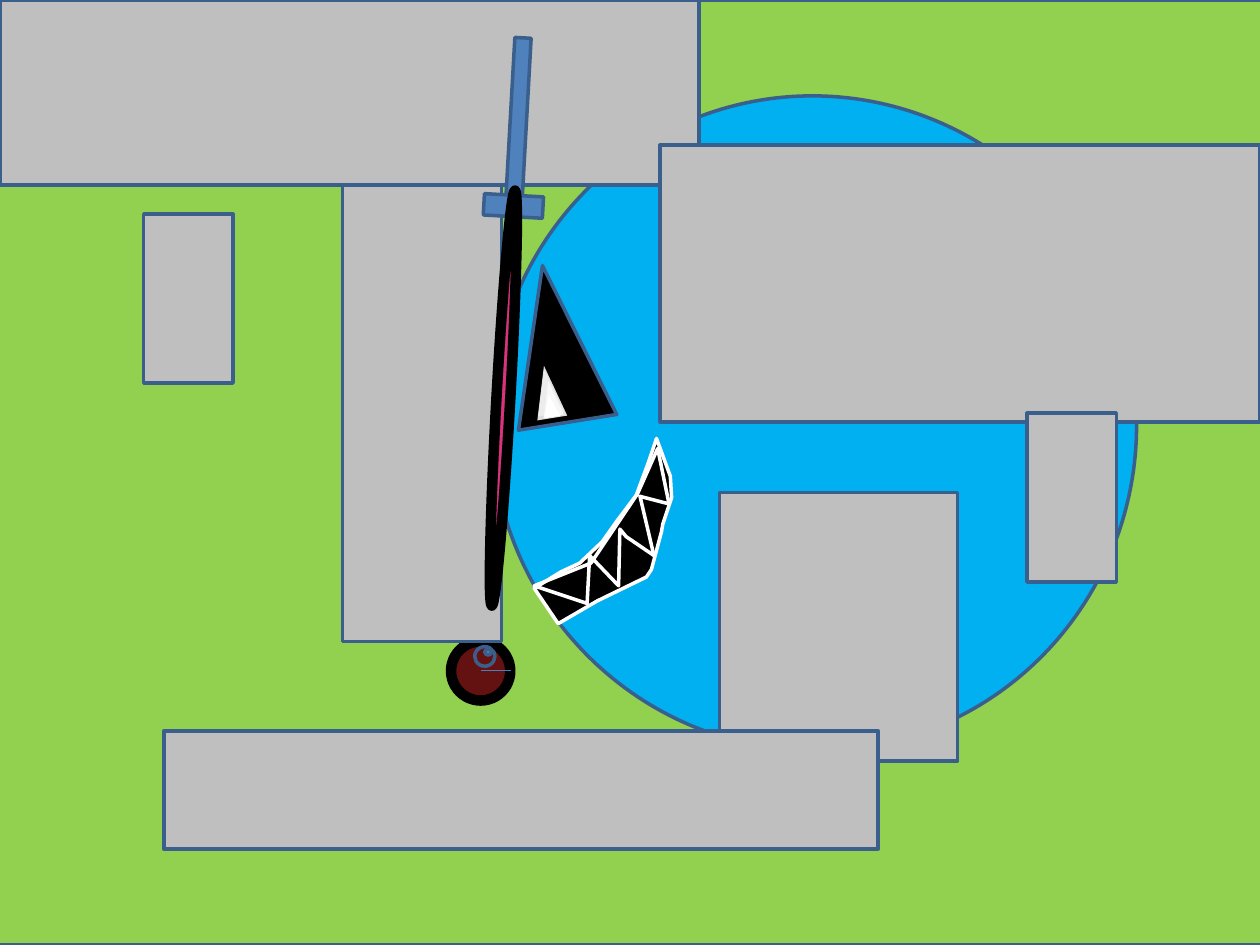
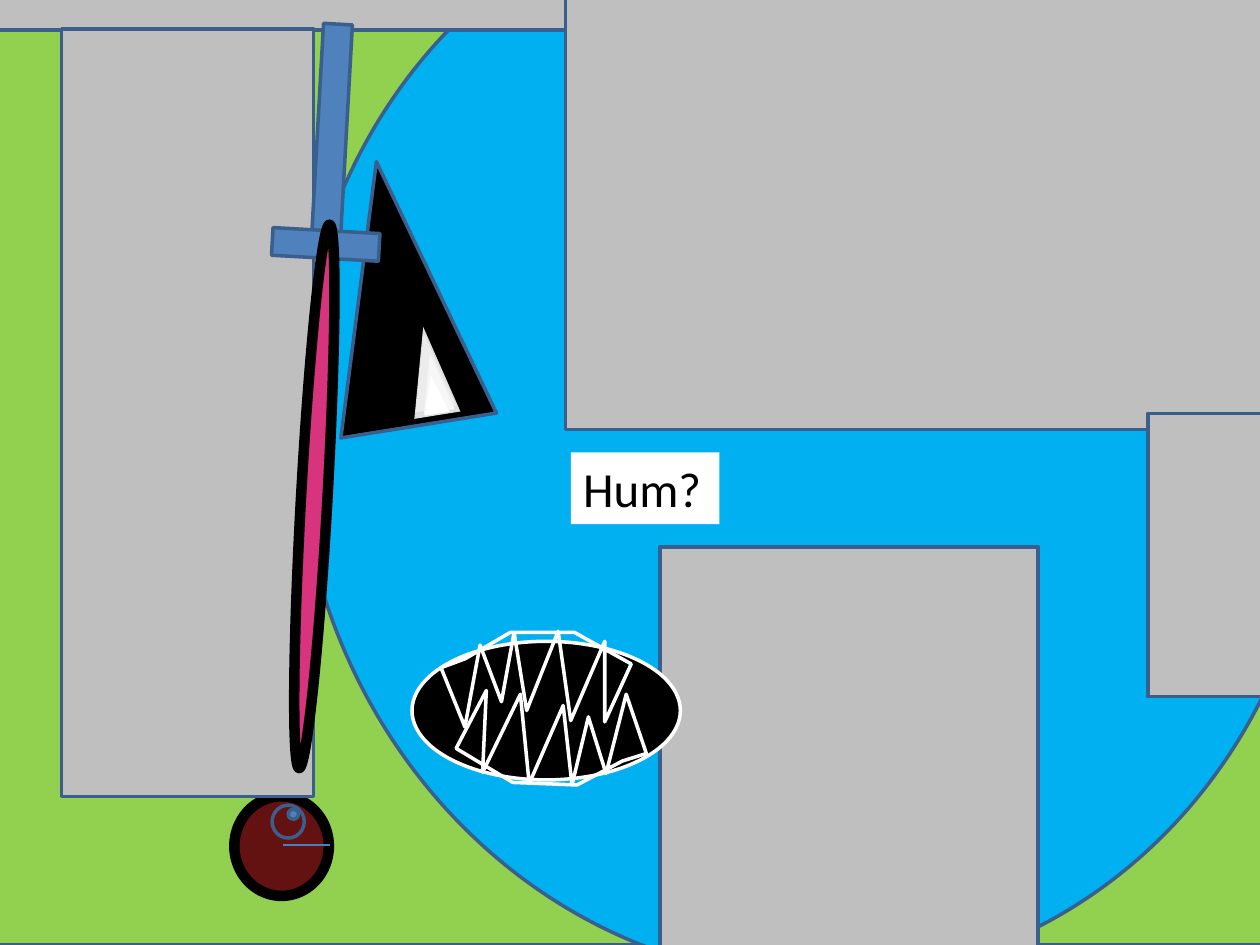
from dataclasses import dataclass

from lxml.etree import SubElement
from pptx import Presentation
from pptx.dml.color import RGBColor
from pptx.enum.shapes import MSO_CONNECTOR, MSO_SHAPE as Preset
from pptx.oxml.ns import qn
from pptx.util import Inches, Pt


@dataclass(frozen=True)
class Theme:
    grass: str = "92D050"
    body: str = "00B0F0"
    stone: str = "BFBFBF"
    edge: str = "3A5F8C"
    steel: str = "4F81BD"
    blade: str = "D8347E"
    thread: str = "4B7EBC"
    ball: str = "641111"
    black: str = "000000"
    white: str = "FFFFFF"
    font: str = "Calibri"
    speech: int = 28
    thin: float = 0.75
    medium: float = 2
    thick: float = 6


THEME = Theme()
COLS, ROWS = 10, 7.5  # one grid cell is one inch
CREATURE_TILT = 350.9
SWORD_TILT = 3.2

# Glint layers: colour, then left, top, width, height as shares of the glint
GLINT_LAYERS = [
    ("DEDEDE", 0, 0, 1, 1),
    ("ECECEC", 0.05, 0.07, 0.88, 0.86),
    ("F7F7F7", 0.26, 0.3, 0.67, 0.66),
    ("FFFFFF", 0.31, 0.55, 0.54, 0.43),
]

SMILE = [
    (4.43, 4.95), (4.74, 4.77), (5.13, 4.58), (5.17, 4.52), (5.25, 4.22),
    (5.26, 4.16), (5.33, 3.95), (5.32, 3.78), (5.21, 3.48), (5.15, 3.66),
    (5.05, 3.93), (4.9, 4.13), (4.78, 4.3), (4.6, 4.47), (4.45, 4.54),
    (4.24, 4.67),
]
SMILE_TEETH = [
    (4.24, 4.65), (4.66, 4.79), (4.68, 4.41), (4.91, 4.65), (4.92, 4.2),
    (4.97, 4.26), (5.19, 4.41), (5.08, 3.94), (5.31, 4), (5.22, 3.56),
    (5.06, 3.92), (4.69, 4.47),
]
UPPER_TEETH = [
    (3.5, 5.3), (3.69, 5.77), (3.81, 5.12), (3.98, 5.57), (4.08, 5.02),
    (4.18, 5.64), (4.43, 5.01), (4.53, 5.72), (4.8, 5.09), (4.8, 5.73),
    (5.01, 5.27), (4.56, 5.02), (4.05, 5.02), (3.69, 5.23),
]
LOWER_TEETH = [
    (5.13, 5.98), (4.97, 5.51), (4.81, 6.14), (4.67, 5.69), (4.54, 6.23),
    (4.47, 5.6), (4.2, 6.22), (4.13, 5.51), (3.83, 6.13), (3.86, 5.48),
    (3.62, 5.94), (4.07, 6.21), (4.58, 6.23), (4.94, 6.04),
]


def paint(shape, fill, line, weight=THEME.medium):
    shape.shadow.inherit = False
    if fill:
        shape.fill.solid()
        shape.fill.fore_color.rgb = RGBColor.from_string(fill)
    else:
        shape.fill.background()
    if line:
        shape.line.color.rgb = RGBColor.from_string(line)
        shape.line.width = Pt(weight)
    else:
        shape.line.fill.background()


def draw(shapes, preset, box, fill, line=THEME.edge, weight=THEME.medium, tilt=0):
    figure = shapes.add_shape(preset, *map(Inches, box))
    figure.rotation = tilt
    paint(figure, fill, line, weight)


def outline(shapes, points, fill=None):
    start, *rest = [(Inches(x), Inches(y)) for x, y in points]
    pen = shapes.build_freeform(*start)
    pen.add_line_segments(rest, close=True)
    paint(pen.convert_to_shape(), fill, THEME.white)


def part_of(box, x, y, w, h):
    """Box of a part given as shares of a whole box."""
    left, top, width, height = box
    return left + x * width, top + y * height, w * width, h * height


def stones(shapes, *boxes):
    for box in boxes:
        draw(shapes, Preset.RECTANGLE, box, THEME.stone)


def creature(shapes, body, eye, glint):
    draw(shapes, Preset.OVAL, body, THEME.body, tilt=CREATURE_TILT)
    draw(shapes, Preset.ISOSCELES_TRIANGLE, eye, THEME.black, tilt=CREATURE_TILT)
    for colour, *shares in GLINT_LAYERS:
        draw(shapes, Preset.ISOSCELES_TRIANGLE, part_of(glint, *shares), colour,
             line=None, tilt=CREATURE_TILT)


def hero(shapes, box):
    draw(shapes, Preset.OVAL, box, THEME.ball, THEME.black, THEME.thick)
    draw(shapes, Preset.OVAL, part_of(box, 0.4, 0.09, 0.34, 0.33), None)
    x, y, length, _ = map(Inches, part_of(box, 0.51, 0.49, 0.5, 0))
    mouth = shapes.add_connector(MSO_CONNECTOR.STRAIGHT, x, y, x + length, y)
    mouth.line.color.rgb = RGBColor.from_string(THEME.thread)
    mouth.line.width = Pt(THEME.thin)
    SubElement(mouth._element.spPr, qn("a:effectLst"))
    draw(shapes, Preset.OVAL, part_of(box, 0.57, 0.13, 0.11, 0.1), THEME.steel)


def sword(shapes, grip, guard, blade):
    for box in (grip, guard):
        draw(shapes, Preset.RECTANGLE, box, THEME.steel, tilt=SWORD_TILT)
    draw(shapes, Preset.OVAL, blade, THEME.blade, THEME.black, THEME.thick, SWORD_TILT)


def speech(shapes, box, words):
    bubble = shapes.add_textbox(*map(Inches, box))
    bubble.fill.solid()
    bubble.fill.fore_color.rgb = RGBColor.from_string(THEME.white)
    bubble.text_frame.word_wrap = True
    line = bubble.text_frame.paragraphs[0]
    line.text = words
    line.font.name = THEME.font
    line.font.size = Pt(THEME.speech)
    line.font.color.rgb = RGBColor.from_string(THEME.black)


def new_scene(deck):
    shapes = deck.slides.add_slide(deck.slide_layouts[6]).shapes
    draw(shapes, Preset.RECTANGLE, (-0.43, 0, 11.65, ROWS), THEME.grass)
    return shapes


def wide_scene(deck):
    scene = new_scene(deck)

    # Grinning creature
    beast = scene.add_group_shape().shapes
    creature(beast, (3.9, 0.76, 5.12, 5.2), (4.01, 2.1, 0.79, 1.26),
             (4.23, 2.9, 0.24, 0.42))
    outline(beast, SMILE, THEME.black)
    outline(beast, SMILE_TEETH)

    # Hero hiding between the stones
    stones(scene, (0, 0, 5.55, 1.47), (1.14, 1.7, 0.71, 1.34),
           (5.71, 3.91, 1.89, 2.13), (5.24, 1.15, 4.76, 2.2),
           (1.3, 5.8, 5.67, 0.94))
    hero(scene, (3.58, 5.09, 0.47, 0.47))
    stones(scene, (2.72, 1.47, 1.26, 3.62), (8.15, 3.28, 0.71, 1.34))
    sword(scene.add_group_shape().shapes, (4.05, 0.3, 0.13, 1.31),
          (3.84, 1.55, 0.47, 0.17), (3.94, 1.51, 0.11, 3.3))


def close_scene(deck):
    scene = new_scene(deck)

    # Creature and stones, closer
    creature(scene, (2.36, -0.96, 8.12, 8.74), (2.53, 1.27, 1.25, 2.12),
             (3.23, 2.59, 0.37, 0.71))
    stones(scene, (-3.82, -2.23, 8.81, 2.47), (5.24, 4.34, 3, 3.58),
           (4.49, -0.3, 7.56, 3.71))
    hero(scene, (1.86, 6.32, 0.75, 0.79))
    stones(scene, (0.49, 0.23, 2, 6.09), (9.11, 3.28, 1.12, 2.25))

    # Speech and open mouth
    speech(scene, (4.53, 3.59, 1.18, 0.57), "Hum?")
    draw(scene, Preset.OVAL, (3.27, 5.09, 2.13, 1.1), THEME.black, THEME.white)
    outline(scene, UPPER_TEETH)
    outline(scene, LOWER_TEETH)
    sword(scene.add_group_shape().shapes, (2.52, 0.19, 0.23, 1.71),
          (2.16, 1.83, 0.85, 0.22), (2.39, 1.78, 0.21, 4.32))


def main():
    deck = Presentation()
    deck.slide_width, deck.slide_height = Inches(COLS), Inches(ROWS)
    wide_scene(deck)
    close_scene(deck)
    deck.save("out.pptx")


if __name__ == "__main__":
    main()
